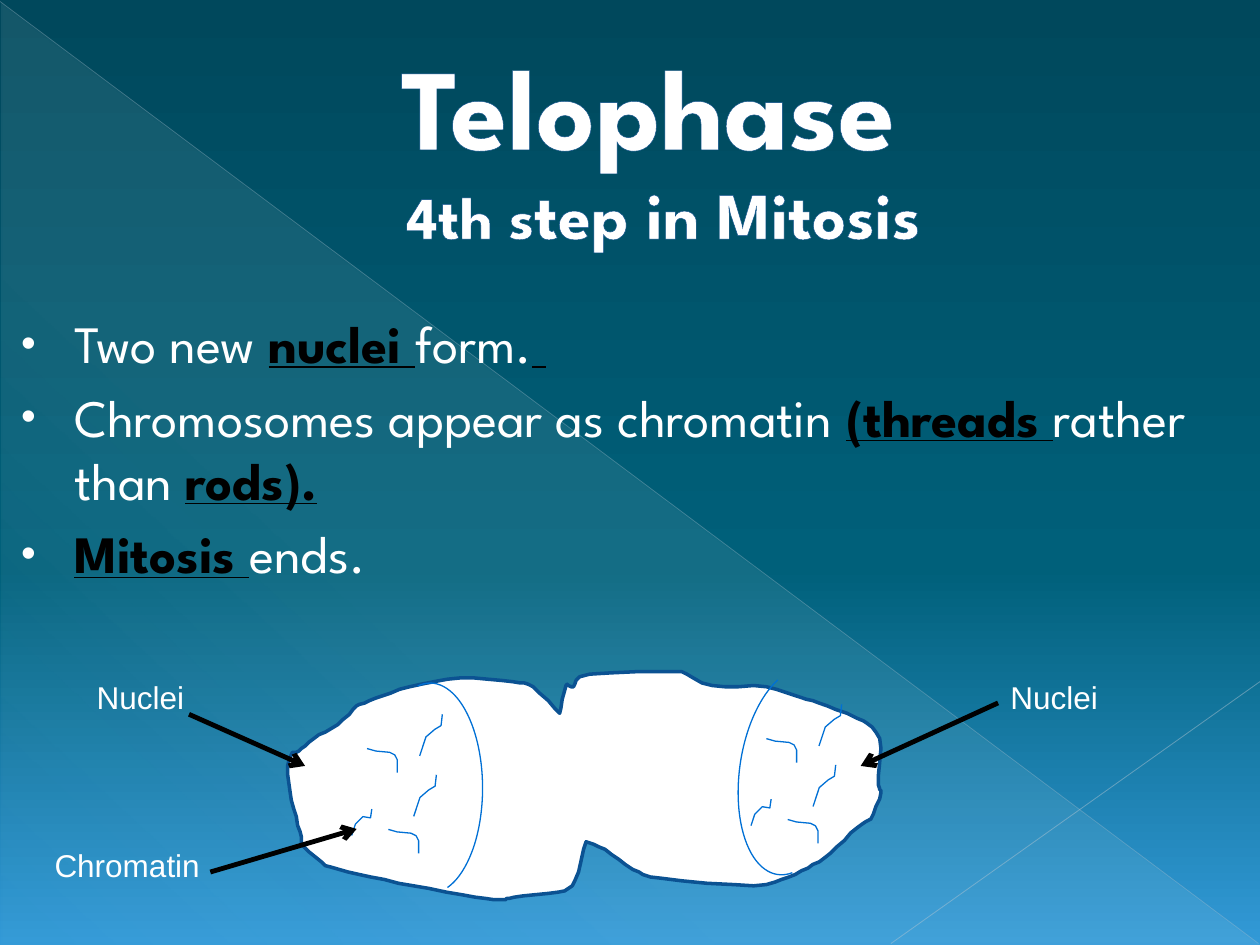
import collections
import itertools

import pptx
import pptx.util
import pptx.dml.color
import pptx.enum.shapes
import pptx.enum.text
import pptx.oxml
import pptx.oxml.ns

Cm = pptx.util.Cm
Pt = pptx.util.Pt
qn = pptx.oxml.ns.qn
NS = pptx.oxml.ns.nsdecls("a")
SHAPE = pptx.enum.shapes.MSO_SHAPE
AUTO_SIZE = pptx.enum.text.MSO_AUTO_SIZE
HEAD_FONT, LABEL_FONT = "League Spartan", "Arial"
WHITE, BLACK = "FFFFFF", "000000"
MEMBRANE_BLUE, THREAD_BLUE, TITLE_EDGE = "0B5292", "0070D5", "0A4D89"
HAZE = "DBF5F9"

PATH_UNIT = Cm(0.0254)
CURVE_STEPS = 4
CELL_EDGES = {
    "top left": [(219, 33), (198, 12), (182, 8), (140, 5), (100, 12), (73, 21), (58, 27)],
    "left shoulder": [(58, 27), (43, 42), (24, 53), (12, 63), (7, 64)],
    "left end": [(7, 64), (3, 75), (6, 102), (13, 127), (16, 139), (33, 154)],
    "bottom left": [(33, 154), (60, 161), (103, 170), (152, 179), (175, 181)],
    "lower cleft": [(175, 181), (183, 179), (218, 175), (231, 166), (240, 135)],
    "bottom right": [(240, 135), (255, 141), (277, 157), (300, 164), (373, 170), (398, 164)],
    "right shoulder": [(398, 164), (416, 156), (434, 144), (455, 124), (466, 117)],
    "right end": [(466, 117), (474, 96), (472, 90), (473, 53), (460, 39)],
    "top right": [(460, 39), (431, 27), (409, 20), (383, 12), (340, 11), (316, 0)],
    "upper cleft": [(316, 0), (243, 2), (230, 12), (224, 11), (219, 33)],
}
HOOK = [(0, 0), (7, 2), (18, 3), (22, 5), (24, 9), (24, 19)]
CUP = [(0, 21), (3, 12), (9, 6), (15, 7), (16, 0)]
ZIGZAG = [(0, 33), (5, 18), (12, 12), (17, 9), (18, 0)]

Thread = collections.namedtuple("Thread", "points x y")
THREADS = [Thread(HOOK, 1.68, 1.55), Thread(CUP, 1.37, 2.77), Thread(ZIGZAG, 2.62, 2.08),
           Thread(ZIGZAG, 2.74, 0.86), Thread(HOOK, 2.11, 3.18)]
NUCLEUS_OFFSETS = [(0, 0), (8.05, -0.2)]

Arc = collections.namedtuple("Arc", "x y w h turn angles")
NUCLEUS_ARCS = [Arc(1.9, 0.23, 2.11, 4.24, 0, (157.74, 48.1)),
                Arc(9.19, -0.08, 2.13, 4.19, 188.2, (157.11, 43.64))]

Label = collections.namedtuple("Label", "text x y w wrap tail tip")
LABELS = [Label("Nuclei", 19.27, 0, 2.29, False, (19.27, 0.63), (16.5, 1.9)),
          Label("Nuclei", 0.85, 0, 2.29, False, (2.96, 0.86), (5.3, 1.9)),
          Label("Chromatin", 0, 3.4, 3.6, True, (3.39, 4.04), (6.34, 3.17))]

TITLE_LINES = [[("Telophase ", 65.7)], [("4th s", 34.2), ("tep in Mitosis", 37.8)]]
BODY_ITEMS = [
    [("Two new ", False), ("nuclei ", True), ("form.", False), (" ", True)],
    [("Chromosomes appear as chromatin ", False), ("(threads ", True),
     ("rather than ", False), ("rods).", True)],
    [("Mitosis ", True), ("ends.", False)],
]


def rgb(color):
    return pptx.dml.color.RGBColor.from_string(color)


def fmt(obj, values):
    for name, value in values.items():
        setattr(obj, name, value)


def xml(tag, attrs="", inner=""):
    return pptx.oxml.parse_xml(f"<a:{tag} {NS} {attrs}>{inner}</a:{tag}>")


def set_line(sp, color, width):
    sp.line.color.rgb = rgb(color)
    sp.line.width = Pt(width)


def set_gradient(fill, parent, stops, angle):
    fill.gradient()
    gs = "".join(
        f'<a:gs pos="{pos * 1000}"><a:srgbClr val="{color}">'
        f'<a:alpha val="{alpha * 1000}"/></a:srgbClr></a:gs>'
        for pos, color, alpha in stops)
    inner = f'<a:gsLst>{gs}</a:gsLst><a:lin ang="{angle * 60000}" scaled="0"/>'
    parent.replace(parent.find(qn("a:gradFill")), xml("gradFill", 'rotWithShape="1"', inner))


def add_run(p, text, color, **font):
    r = p.add_run()
    r.text = text
    fmt(r.font, font)
    r.font.color.rgb = rgb(color)
    return r


def add_line(s, start, end, color, width, alpha=100, arrow=False):
    c = s.shapes.add_connector(pptx.enum.shapes.MSO_CONNECTOR.STRAIGHT,
                               *(Cm(v) for v in (*start, *end)))
    set_line(c, color, width)
    spPr = c.element.spPr
    spPr.find(".//" + qn("a:srgbClr")).append(xml("alpha", f'val="{alpha * 1000}"'))
    if arrow:
        spPr.find(qn("a:ln")).append(xml("tailEnd", 'type="arrow"'))
    spPr.append(xml("effectLst"))


def smooth(points):
    padded = [points[0], *points, points[-1]]
    curve = [points[0]]
    for a, b, c, d in zip(padded, padded[1:], padded[2:], padded[3:]):
        for step in range(1, CURVE_STEPS + 1):
            t = step / CURVE_STEPS
            curve.append(tuple(
                q + t * (r - p) / 2 + t ** 2 * (2 * p - 5 * q + 4 * r - u) / 2
                + t ** 3 * (3 * q - p - 3 * r + u) / 2
                for p, q, r, u in zip(a, b, c, d)))
    return curve


def add_path(s, points, x, y, color, width, fill=None):
    fb = s.shapes.build_freeform(*points[0], scale=PATH_UNIT)
    fb.add_line_segments(points[1:], close=fill is not None)
    sp = fb.convert_to_shape(Cm(x), Cm(y))
    sp.shadow.inherit = False
    if fill:
        sp.fill.solid()
        sp.fill.fore_color.rgb = rgb(fill)
    else:
        sp.fill.background()
    set_line(sp, color, width)


def place(sp, x, y, w, h):
    fmt(sp, {"left": Cm(x), "top": Cm(y), "width": Cm(w), "height": Cm(h)})
    sp.element.getparent().append(sp.element)
    sp.text_frame.auto_size = AUTO_SIZE.NONE


def add_backdrop(s, x, y, w, h):
    fill = s.background.fill
    fill.solid()
    set_gradient(fill, s.element.find(".//" + qn("p:bgPr")),
                 [(0, "00485C", 100), (60, "00607A", 100), (100, "3299D7", 100)], 90)
    sp = s.shapes.add_shape(SHAPE.RIGHT_TRIANGLE, Cm(x + 0.03), Cm(y + 0.05),
                            Cm(w - 0.03), Cm(h - 0.05))
    sp.shadow.inherit = False
    sp.line.fill.background()
    set_gradient(sp.fill, sp.element.spPr, [(0, HAZE, 10), (70, HAZE, 8), (100, HAZE, 1)], 133)
    bottom = y + h - 0.03
    add_line(s, (x, y + 0.03), (x + w - 0.03, bottom), "ACC0CE", 0.39, alpha=35)
    add_line(s, (x + w, y + 13.74), (x + 17.96, bottom), "B5C7D3", 0.47, alpha=45)


def add_title(s, x, y, w, h):
    sp = s.shapes.title
    place(sp, x, y, w, h)
    sp.text_frame.vertical_anchor = pptx.enum.text.MSO_ANCHOR.MIDDLE
    p = sp.text_frame.paragraphs[0]
    p.alignment = pptx.enum.text.PP_ALIGN.CENTER
    p._p.get_or_add_pPr().set("marL", str(Cm(1.35)))
    edge = f'<a:solidFill><a:srgbClr val="{TITLE_EDGE}"/></a:solidFill>'
    for i, line in enumerate(TITLE_LINES):
        if i:
            p.add_line_break()
        for text, size in line:
            r = add_run(p, text, WHITE, name=HEAD_FONT, size=Pt(size), bold=True)
            r.font._element.insert(0, xml("ln", f'w="{Pt(0.5)}"', edge))


def add_bullet(p, indent, hang):
    pPr = p._p.get_or_add_pPr()
    pPr.set("marL", str(Cm(indent)))
    pPr.set("indent", str(Cm(-hang)))
    pPr.extend([xml("buClr", inner=f'<a:srgbClr val="{WHITE}"/>'),
                xml("buSzPct", 'val="80000"'),
                xml("buFont", f'typeface="{LABEL_FONT}"'),
                xml("buChar", 'char="•"')])


def add_body(s, x, y, w, h):
    sp = s.placeholders[1]
    place(sp, x, y, w, h)
    tf = sp.text_frame
    for i, item in enumerate(BODY_ITEMS):
        p = tf.add_paragraph() if i else tf.paragraphs[0]
        add_bullet(p, 1.24, 1.07)
        for text, key in item:
            add_run(p, text, BLACK if key else WHITE, name=HEAD_FONT,
                    size=Pt(30), bold=key, underline=key)


def add_cell(s, x, y):
    outline = list(itertools.chain.from_iterable(
        smooth(edge)[:-1] for edge in CELL_EDGES.values()))
    add_path(s, outline, x, y, MEMBRANE_BLUE, 2, WHITE)
    for arc in NUCLEUS_ARCS:
        sp = s.shapes.add_shape(SHAPE.ARC, Cm(x + arc.x), Cm(y + arc.y), Cm(arc.w), Cm(arc.h))
        sp.shadow.inherit = False
        sp.rotation = arc.turn
        sp.adjustments[0], sp.adjustments[1] = arc.angles
        sp.fill.background()
        set_line(sp, THREAD_BLUE, 0.75)
    for (dx, dy), thread in itertools.product(NUCLEUS_OFFSETS, THREADS):
        add_path(s, thread.points, x + dx + thread.x, y + dy + thread.y, THREAD_BLUE, 0.75)


def add_labels(s, x, y):
    for label in LABELS:
        tail, tip = ((x + dx, y + dy) for dx, dy in (label.tail, label.tip))
        add_line(s, tail, tip, BLACK, 2.75, arrow=True)
        sp = s.shapes.add_textbox(Cm(x + label.x), Cm(y + label.y), Cm(label.w), Cm(1.02))
        tf = sp.text_frame
        fmt(tf, {"word_wrap": label.wrap, "auto_size": AUTO_SIZE.SHAPE_TO_FIT_TEXT})
        add_run(tf.paragraphs[0], label.text, WHITE, name=LABEL_FONT, size=Pt(18))


def main():
    prs = pptx.Presentation()
    fmt(prs, {"slide_width": Cm(25.4), "slide_height": Cm(19.05)})
    s = prs.slides.add_slide(prs.slide_layouts[1])
    add_backdrop(s, 0, 0, 25.4, 19.05)
    add_title(s, 0, 0.43, 25.4, 4.93)
    add_body(s, 0, 6.15, 25.4, 6.99)
    add_cell(s, 5.72, 13.54)
    add_labels(s, 0.85, 13.54)
    prs.save("out.pptx")


if __name__ == "__main__":
    main()
